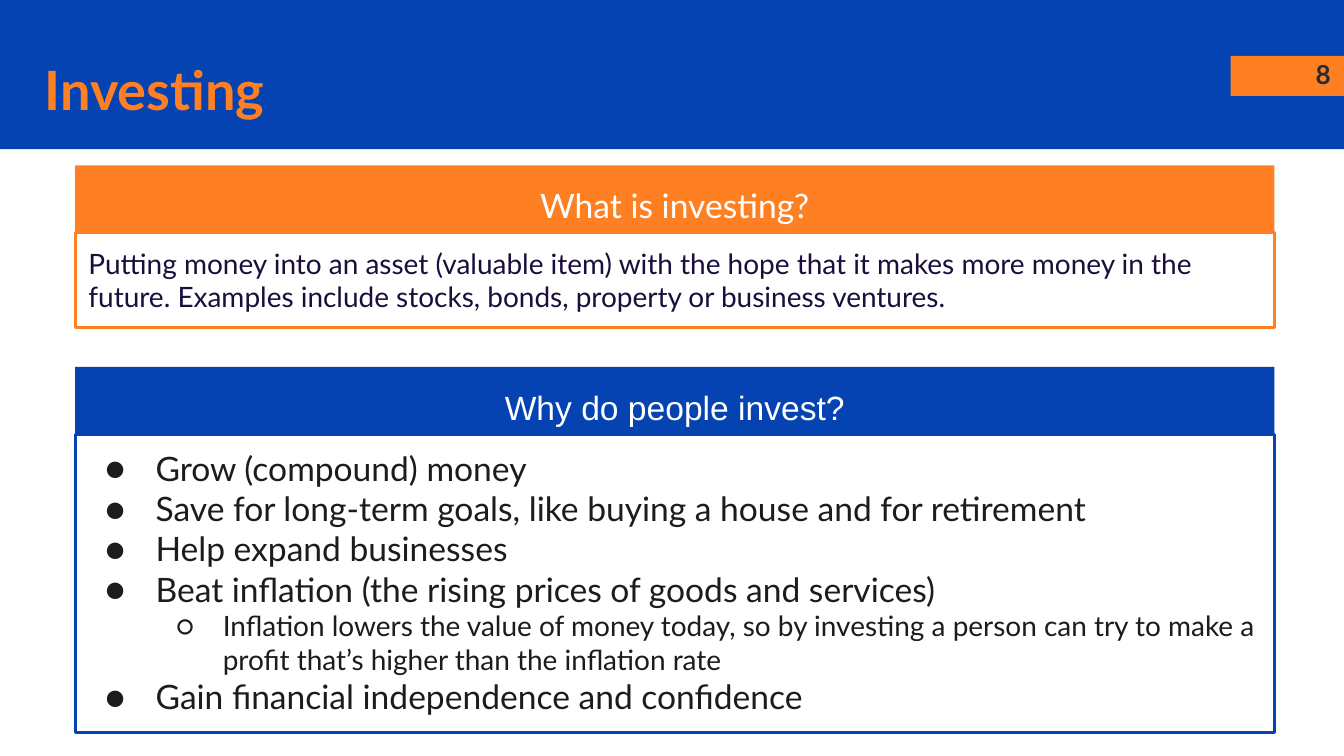
"""Build the Investing slide: a title band over two headed panels."""
import dataclasses

import lxml.etree
import pptx
import pptx.dml.color
import pptx.enum.shapes
import pptx.enum.text
import pptx.oxml.ns
import pptx.util

Pt = pptx.util.Pt
RGB = pptx.dml.color.RGBColor.from_string
ALIGN = pptx.enum.text.PP_ALIGN


@dataclasses.dataclass(frozen=True)
class Theme:
    blue: str = "0543B3"
    orange: str = "FF8022"
    white: str = "FFFFFF"
    ink: str = "1C1C1C"
    navy: str = "1B0E3D"
    slate: str = "262A33"
    font: str = "Lato"
    alt_font: str = "Arial"
    title: float = 29
    large: float = 18
    body: float = 15
    number: float = 14
    inset: float = 7.2
    border: float = 1.5
    leading: float = 1.15


class Deck:
    def __init__(self, prs, theme):
        self.theme = theme
        self.s = prs.slides.add_slide(prs.slide_layouts[6])

    def rect(self, box, fill=None, line=None):
        sp = self.s.shapes.add_shape(
            pptx.enum.shapes.MSO_SHAPE.RECTANGLE, *map(Pt, box))
        sp.shadow.inherit = False
        if fill:
            sp.fill.solid()
            sp.fill.fore_color.rgb = RGB(fill)
        else:
            sp.fill.background()
        if line:
            sp.line.color.rgb = RGB(line)
            sp.line.width = Pt(self.theme.border)
        else:
            sp.line.fill.background()
        return sp

    def frame(self, sp):
        tf = sp.text_frame
        fmt = dict.fromkeys(
            ("margin_left", "margin_top", "margin_right", "margin_bottom"),
            Pt(self.theme.inset))
        fmt.update(word_wrap=True,
                   vertical_anchor=pptx.enum.text.MSO_ANCHOR.TOP)
        for name, value in fmt.items():
            setattr(tf, name, value)
        return tf

    def text(self, p, words, size, color, bold=False, font=None,
             align=ALIGN.LEFT, leading=None):
        p.alignment = align
        if leading:
            p.line_spacing = leading
        r = p.add_run()
        r.text = words
        fmt = {"name": font or self.theme.font, "size": Pt(size), "bold": bold}
        for name, value in fmt.items():
            setattr(r.font, name, value)
        r.font.color.rgb = RGB(color)

    def label(self, box, words, size, color, **fmt):
        sp = self.s.shapes.add_textbox(*map(Pt, box))
        self.text(self.frame(sp).paragraphs[0], words, size, color, **fmt)

    def heading(self, box, words, fill, font=None):
        t = self.theme
        tf = self.frame(self.rect(box, fill))
        self.text(tf.paragraphs[0], words, t.large, t.white, font=font,
                  align=ALIGN.CENTER, leading=t.leading)

    def panel(self, box, words, line):
        t = self.theme
        tf = self.frame(self.rect(box, line=line))
        self.text(tf.paragraphs[0], words, t.body, t.navy)

    def bullets(self, box, items, line):
        t = self.theme
        levels = (("●", 36, -27, t.large), ("○", 72, -25.2, t.body))
        tf = self.frame(self.rect(box, t.white, line))
        for i, (level, words) in enumerate(items):
            p = tf.add_paragraph() if i else tf.paragraphs[0]
            mark, left, indent, size = levels[level]
            p.level = level
            self.bullet(p, mark, left, indent)
            self.text(p, words, size, t.ink)

    def bullet(self, p, mark, left, indent):
        qn = pptx.oxml.ns.qn
        pr = p._p.get_or_add_pPr()
        pr.set("marL", str(Pt(left)))
        pr.set("indent", str(Pt(indent)))
        color = lxml.etree.SubElement(pr, qn("a:buClr"))
        lxml.etree.SubElement(color, qn("a:srgbClr"), val=self.theme.ink)
        lxml.etree.SubElement(pr, qn("a:buFont"), typeface=self.theme.font)
        lxml.etree.SubElement(pr, qn("a:buChar"), char=mark)


def main():
    prs = pptx.Presentation()
    prs.slide_width, prs.slide_height = Pt(720), Pt(405)
    t = Theme()
    deck = Deck(prs, t)
    left, width, head = 40.3, 642.4, 36
    what_top, why_top = 88.6, 196.6

    deck.rect((0, 0, 720, 80), t.blue)
    deck.rect((659.3, 30, 60.7, 21.4), t.orange)
    deck.label((676.8, 24, 43.2, 31), "8", t.number, t.slate,
               bold=True, align=ALIGN.RIGHT)
    deck.label((16.8, 18, 640, 49.7), "Investing", t.title, t.orange,
               bold=True, leading=t.leading)

    deck.heading((left, what_top, width, head), "What is investing?", t.orange)
    deck.panel(
        (left, what_top + head, width, 51),
        "Putting money into an asset (valuable item) with the hope that it "
        "makes more money in the future. Examples include stocks, bonds, "
        "property or business ventures.", t.orange)

    deck.bullets((left, why_top + head, width, 160), (
        (0, "Grow (compound) money"),
        (0, "Save for long-term goals, like buying a house and for retirement"),
        (0, "Help expand businesses"),
        (0, "Beat inflation (the rising prices of goods and services)"),
        (1, "Inflation lowers the value of money today, so by investing a "
            "person can try to make a profit that’s higher than the "
            "inflation rate"),
        (0, "Gain financial independence and confidence"),
    ), t.blue)
    deck.heading((left, why_top, width, head), "Why do people invest?",
                 t.blue, t.alt_font)
    prs.save("out.pptx")


if __name__ == "__main__":
    main()
